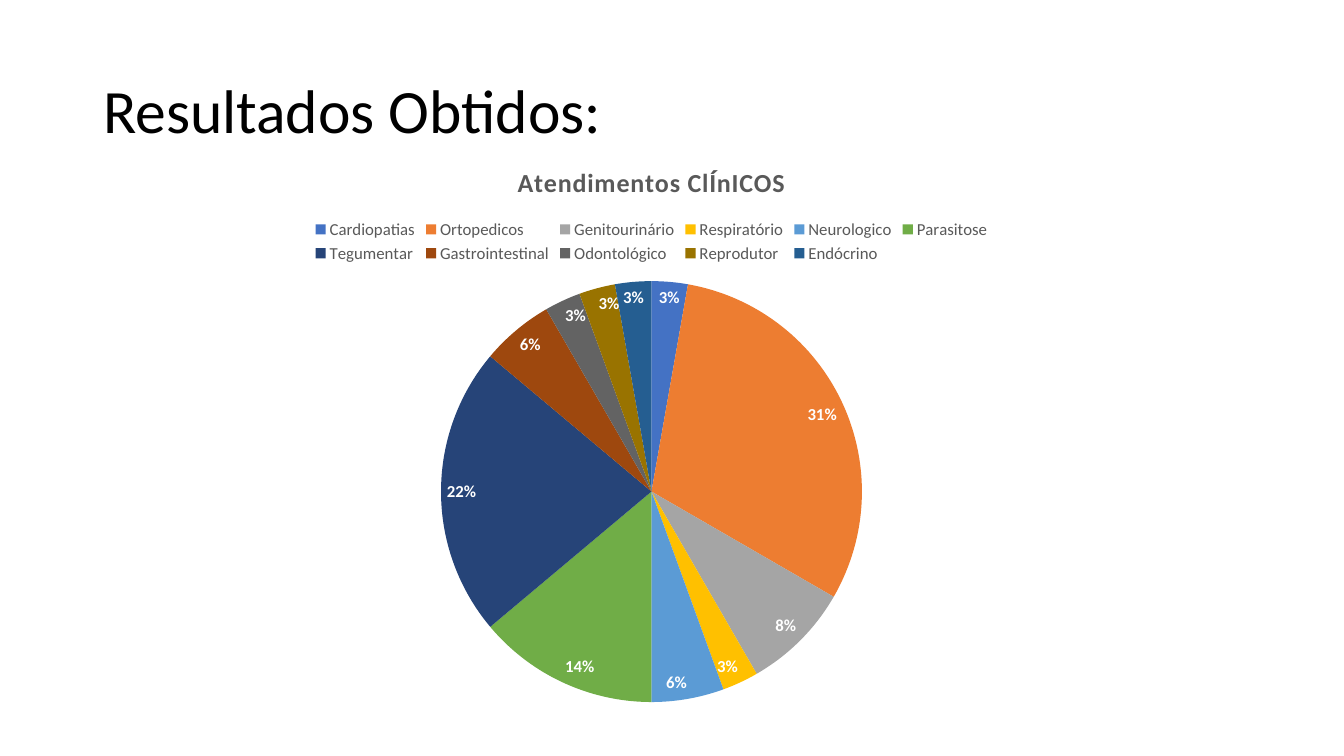
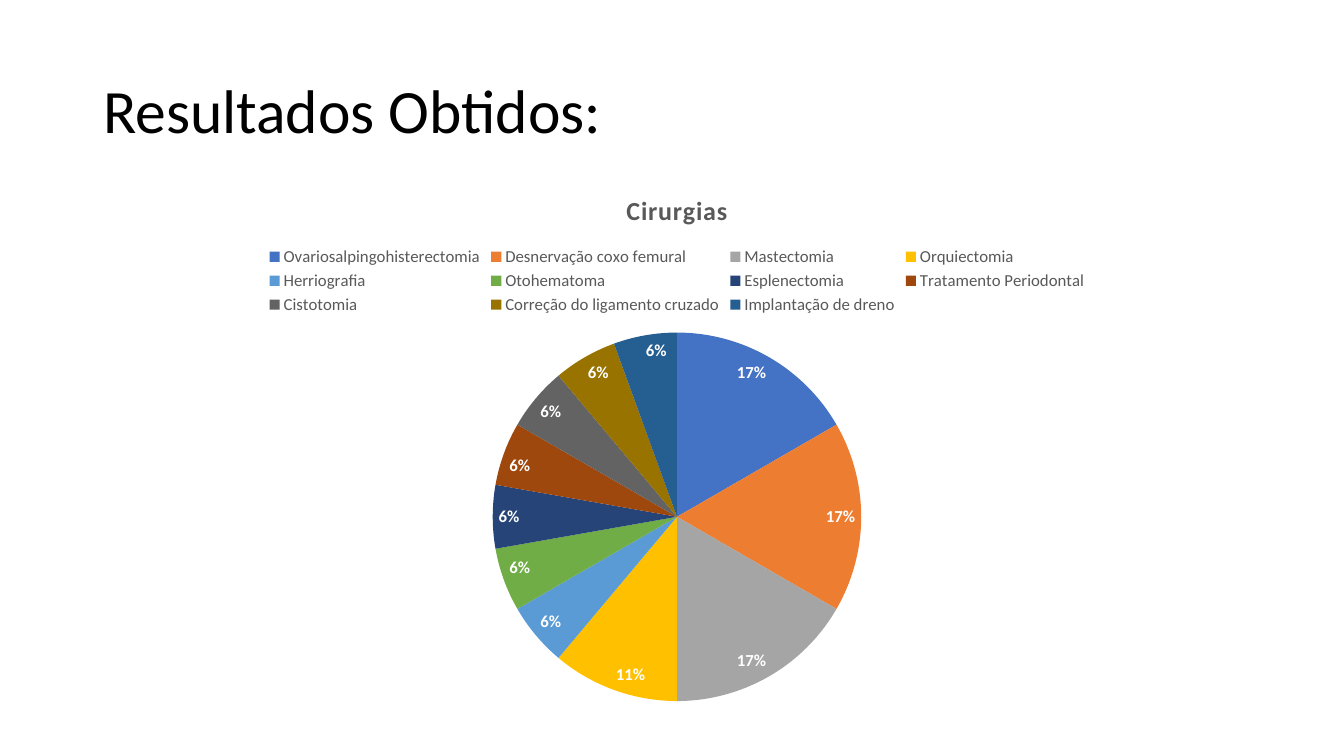
from pptx import Presentation
from pptx.chart.data import CategoryChartData
from pptx.dml.color import RGBColor
from pptx.enum.chart import XL_CHART_TYPE, XL_LABEL_POSITION, XL_LEGEND_POSITION
from pptx.enum.text import MSO_ANCHOR, MSO_AUTO_SIZE, PP_ALIGN
from pptx.util import Emu, Pt

EMU_PER_PX = 914400 / 100.8
FONT = "Calibri"
BLACK, GREY, WHITE = "000000", "595959", "FFFFFF"
SLICE_COLORS = [
    "4472C4", "ED7D31", "A5A5A5", "FFC000", "5B9BD5", "70AD47",
    "264478", "9E480E", "636363", "997300", "255E91",
]
SLIDE_SIZE = (1344, 756)
TITLE_BOX = (93, 41, 1159, 146)
PAGE_TITLE = "Resultados Obtidos:"

# Slice values are case counts; the labels show each one's share of the total.
PIES = [
    {
        "title": "Atendimentos ClÍnICOS",
        "series": "Series 1",
        "box": (35, 143, 1233, 573),
        "slices": [
            ("Cardiopatias", 1), ("Ortopedicos", 11), ("Genitourinário", 3),
            ("Respiratório", 1), ("Neurologico", 2), ("Parasitose", 5),
            ("Tegumentar", 8), ("Gastrointestinal", 2), ("Odontológico", 1),
            ("Reprodutor", 1), ("Endócrino", 1),
        ],
    },
    {
        "title": "Cirurgias",
        "series": "Cirurgias",
        "box": (44, 171, 1266, 544),
        "slices": [
            ("Ovariosalpingohisterectomia", 3), ("Desnervação coxo femural", 3),
            ("Mastectomia", 3), ("Orquiectomia", 2), ("Herriografia", 1),
            ("Otohematoma", 1), ("Esplenectomia", 1), ("Tratamento Periodontal", 1),
            ("Cistotomia", 1), ("Correção do ligamento cruzado", 1),
            ("Implantação de dreno", 1),
        ],
    },
]


def px(*lengths):
    return [Emu(round(length * EMU_PER_PX)) for length in lengths]


def style_font(font, size, color, bold=False):
    font.name = FONT
    font.size = Pt(size)
    font.bold = bold
    font.color.rgb = RGBColor.from_string(color)


def add_title(page):
    title = page.shapes.title
    title.left, title.top, title.width, title.height = px(*TITLE_BOX)
    frame = title.text_frame
    frame.text = PAGE_TITLE
    frame.auto_size = MSO_AUTO_SIZE.NONE
    frame.vertical_anchor = MSO_ANCHOR.MIDDLE
    para = frame.paragraphs[0]
    para.alignment = PP_ALIGN.LEFT
    para.line_spacing = 0.9
    style_font(para.font, 44, BLACK)


def add_chart_title(chart, text):
    chart.has_title = True
    chart.chart_title.include_in_layout = False
    para = chart.chart_title.text_frame.paragraphs[0]
    span = para.add_run()
    span.text = text
    style_font(para.font, 18.6, GREY, bold=True)
    style_font(span.font, 18.6, GREY, bold=True)
    span._r.get_or_add_rPr().set("spc", "50")


def add_pie(page, pie):
    names, values = zip(*pie["slices"])
    data = CategoryChartData()
    data.categories = names
    data.add_series(pie["series"], values)
    chart = page.shapes.add_chart(XL_CHART_TYPE.PIE, *px(*pie["box"]), data).chart
    style_font(chart.font, 10, BLACK)
    add_chart_title(chart, pie["title"])

    chart.has_legend = True
    chart.legend.position = XL_LEGEND_POSITION.TOP
    chart.legend.include_in_layout = False
    style_font(chart.legend.font, 12, GREY)

    plot = chart.plots[0]
    plot.vary_by_categories = True
    series = plot.series[0]
    for index, color in enumerate(SLICE_COLORS):
        point = series.points[index].format
        point.fill.solid()
        point.fill.fore_color.rgb = RGBColor.from_string(color)
        point.line.fill.background()

    labels = series.data_labels
    labels.show_value = False
    labels.show_percentage = True
    labels.number_format = "0%"
    labels.number_format_is_linked = False
    labels.position = XL_LABEL_POSITION.INSIDE_END
    style_font(labels.font, 12, WHITE, bold=True)


def main():
    deck = Presentation()
    deck.slide_width, deck.slide_height = px(*SLIDE_SIZE)
    title_only = deck.slide_layouts.get_by_name("Title Only")
    for pie in PIES:
        page = deck.slides.add_slide(title_only)
        add_title(page)
        add_pie(page, pie)
    deck.save("out.pptx")


if __name__ == "__main__":
    main()
